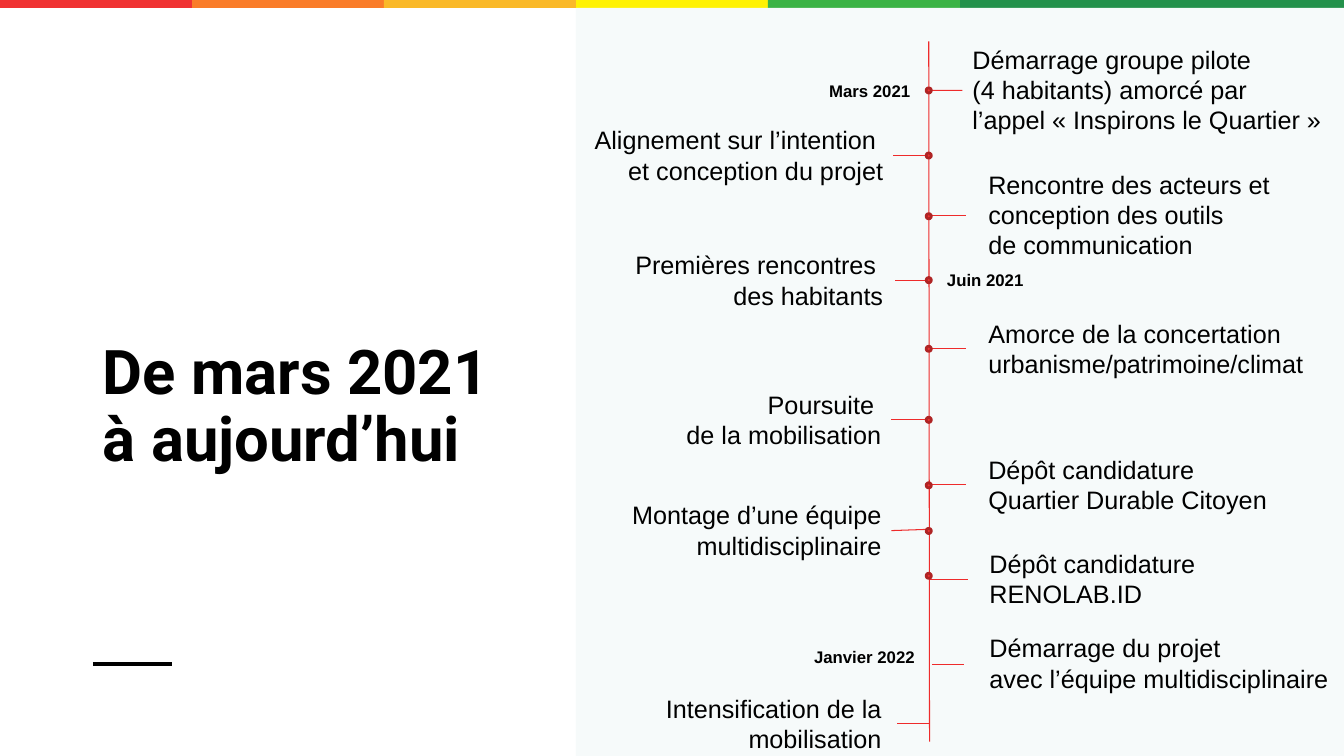
from pptx import Presentation
from pptx.dml.color import RGBColor
from pptx.enum.shapes import MSO_CONNECTOR, MSO_SHAPE
from pptx.enum.text import MSO_ANCHOR, PP_ALIGN
from pptx.oxml.ns import qn
from pptx.util import Cm, Pt
from lxml import etree

WIDE, HIGH = 33.87, 19.05
BAND = 0.2
HEX = {
    "text": "000000", "panel": "F6FAFA", "axis": "EE2B2B",
    "dot": "F03232", "ring": "AF2424",
    "red": "F03232", "orange": "FA7C28", "amber": "FAB928",
    "yellow": "FFF203", "green": "3BB345", "forest": "23914B",
}
BARS = ["red", "orange", "amber", "yellow", "green", "forest", "forest"]

# Horizontal offsets are measured from the axis, heights from the panel top.
# Date: text, left, top, width, alignment
DATES = [
    ("Mars 2021", -2.76, 1.7, 2.7, PP_ALIGN.LEFT),
    ("Juin 2021", 0.21, 6.48, 2.6, PP_ALIGN.LEFT),
    ("Janvier 2022", -3.17, 15.98, 3.07, PP_ALIGN.RIGHT),
]
# Step: text, inner edge, top, width, tick (near, far, height);
# a negative edge is left of the axis, a far end of None joins the text box
STEPS = [
    ("Démarrage groupe pilote \v(4 habitants) amorcé par \vl’appel « Inspirons le Quartier »",
     0.85, 0.79, 9.37, (0.06, None, 2.08)),
    ("Alignement sur l’intention \vet conception du projet",
     -0.9, 2.82, 7.85, (0.06, None, 3.72)),
    ("Rencontre des acteurs et \vconception des outils \vde communication",
     1.25, 3.94, 7.85, (-0.04, 0.93, 5.24)),
    ("Premières rencontres \vdes habitants",
     -0.9, 5.97, 6.81, (0.06, -0.84, 6.86)),
    ("Amorce de la concertation\nurbanisme/patrimoine/climat",
     1.25, 7.7, 8.53, (-0.04, 0.93, 8.59)),
    ("Poursuite \vde la mobilisation",
     -0.95, 9.48, 5.46, (0.06, None, 10.38)),
    ("Dépôt candidature\nQuartier Durable Citoyen",
     1.25, 11.13, 7.59, (-0.04, 0.93, 12.02)),
    ("Montage d’une équipe\nmultidisciplinaire",
     -0.94, 12.27, 6.86, (-0.06, None, 13.14)),
    ("Dépôt candidature\nRENOLAB.ID",
     1.28, 13.49, 5.74, (0, 0.98, 14.41)),
    ("Démarrage du projet\navec l’équipe multidisciplinaire",
     1.28, 15.62, 9.14, (0.09, 0.88, 16.54)),
    ("Intensification de la mobilisation",
     -0.94, 17.15, 9.14, (0.02, -0.8, 18.04)),
]
DOTS = [2.08, 3.72, 5.25, 6.86, 8.59, 10.38, 12.03, 13.18, 14.31]


def tint(name):
    return RGBColor.from_string(HEX[name])


def block(slide, kind, x, y, w, h, fill):
    shape = slide.shapes.add_shape(kind, Cm(x), Cm(y), Cm(w), Cm(h))
    shape.shadow.inherit = False
    shape.fill.solid()
    shape.fill.fore_color.rgb = tint(fill)
    shape.line.fill.background()
    return shape


def rule(slide, x1, y1, x2, y2, color, width):
    line = slide.shapes.add_connector(
        MSO_CONNECTOR.STRAIGHT, Cm(x1), Cm(y1), Cm(x2), Cm(y2))
    line.line.color.rgb = tint(color)
    line.line.width = Pt(width)
    etree.SubElement(line._element.spPr, qn("a:effectLst"))
    return line


def label(slide, text, x, y, w, h, size, align=PP_ALIGN.LEFT, bold=False, face="Arial"):
    area = slide.shapes.add_textbox(Cm(x), Cm(y), Cm(w), Cm(h))
    frame = area.text_frame
    frame.word_wrap = True
    frame.text = text
    for para in frame.paragraphs:
        para.alignment = align
        para.font.name = face
        para.font.size = Pt(size)
        para.font.bold = bold
        para.font.color.rgb = tint("text")
    return area


def band(slide, x, y, w, h):
    step = w / len(BARS)
    for i, color in enumerate(BARS):
        block(slide, MSO_SHAPE.RECTANGLE, x + i * step, y, step, h, color)


def heading(slide, x, y, w, h):
    area = label(slide, "De mars 2021 à aujourd’hui", x, y + 5.59, w, 8.99,
                 44, bold=True, face="Roboto")
    area.text_frame.vertical_anchor = MSO_ANCHOR.MIDDLE
    area.text_frame.paragraphs[0].line_spacing = 0.9
    rule(slide, x, y + 16.54, x + 2, y + 16.54, "text", 3)


def timeline(slide, x, y, w, h):
    block(slide, MSO_SHAPE.RECTANGLE, x, y, w, h, "panel")
    axis = x + 8.89
    rule(slide, axis, y + 0.84, axis + 0.02, y + 18.49, "axis", 0.75)

    # Steps with their ticks
    for text, edge, top, width, (near, far, level) in STEPS:
        left = edge < 0
        tall = 2.57 if text.count("\v") == 2 else 1.8
        area = label(slide, text, axis + edge - (width if left else 0), y + top,
                     width, tall, 18, PP_ALIGN.RIGHT if left else PP_ALIGN.LEFT)
        end = edge if far is None else far
        tick = rule(slide, axis + near, y + level, axis + end, y + level, "axis", 0.75)
        if far is None:
            tick.end_connect(area, 3 if left else 1)

    # Dots on the axis
    size = 0.13
    for level in DOTS:
        dot = block(slide, MSO_SHAPE.OVAL, axis - size / 2, y + level - size / 2,
                    size, size, "dot")
        dot.line.color.rgb = tint("ring")
        dot.line.width = Pt(2)

    # Dates
    for text, shift, top, width, align in DATES:
        label(slide, text, axis + shift, y + top, width, 0.77, 12, align, True)


def main():
    deck = Presentation()
    deck.slide_width, deck.slide_height = Cm(WIDE), Cm(HIGH)
    slide = deck.slides.add_slide(deck.slide_layouts[6])
    split = WIDE * 3 / 7
    band(slide, 0, 0, WIDE, BAND)
    heading(slide, 2.34, BAND, 11, HIGH - BAND)
    timeline(slide, split, BAND, WIDE - split, HIGH - BAND)
    deck.save("out.pptx")


if __name__ == "__main__":
    main()
